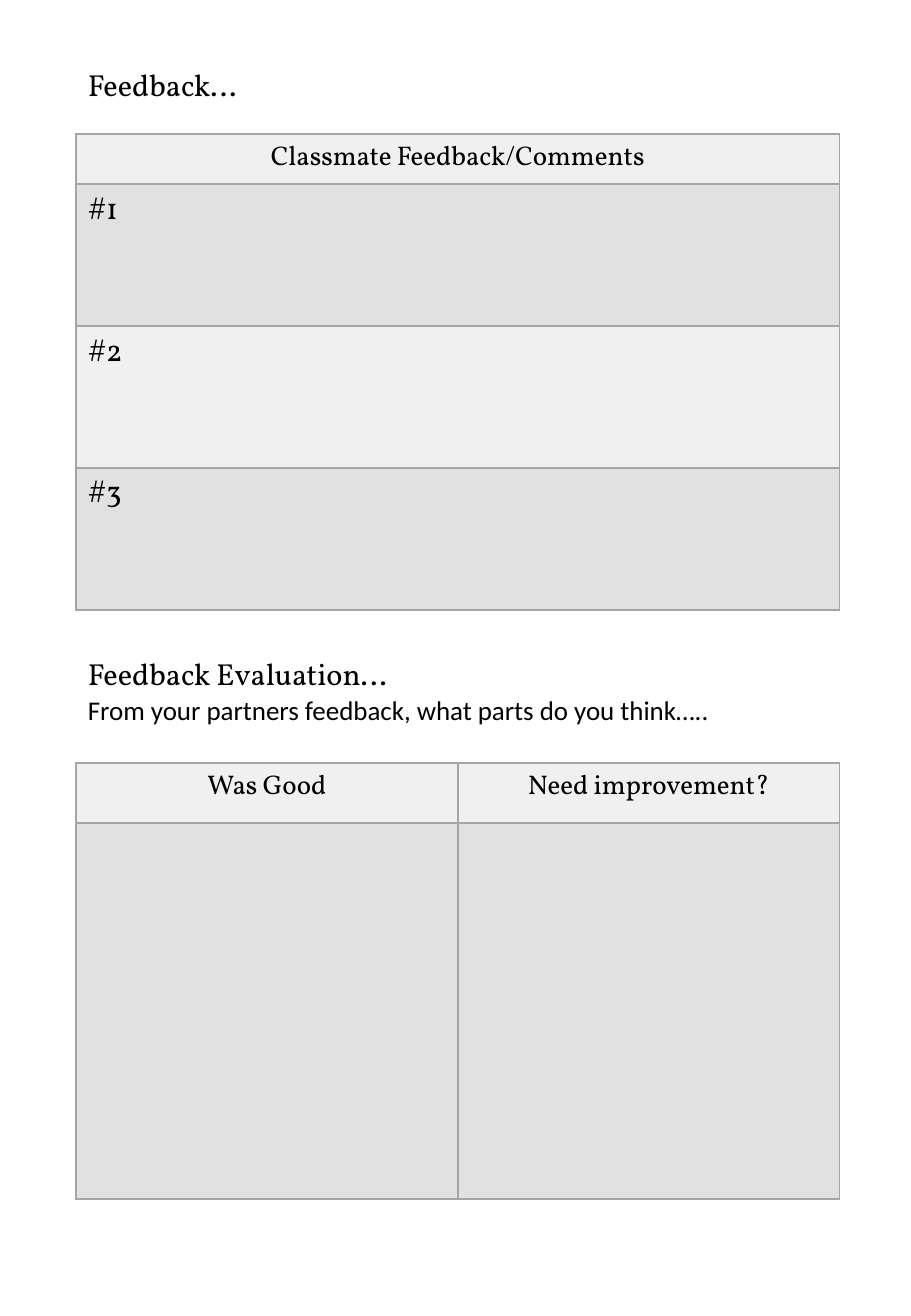
import pptx
import pptx.dml.color
import pptx.enum.text
import pptx.oxml
import pptx.oxml.ns
import pptx.util

PX = 7526  # EMU per pixel
BLACK = pptx.dml.color.RGBColor(0x00, 0x00, 0x00)
LIGHT = pptx.dml.color.RGBColor(0xF0, 0xF0, 0xF0)
DARK = pptx.dml.color.RGBColor(0xE1, 0xE1, 0xE1)
BORDER = pptx.dml.color.RGBColor(0xA5, 0xA5, 0xA5)
SERIF, SANS = "Vollkorn", "Calibri"
CENTER = pptx.enum.text.PP_ALIGN.CENTER
LEFT, WIDTH = 76, 764


def px(n):
    return pptx.util.Emu(n * PX)


def set_font(p, name, size):
    p.font.name = name
    p.font.size = pptx.util.Pt(size)
    p.font.color.rgb = BLACK


def add_borders(cell):
    tcPr = cell._tc.get_or_add_tcPr()
    for i, side in enumerate(("lnL", "lnR", "lnT", "lnB")):
        tcPr.insert(i, pptx.oxml.parse_xml(
            f'<a:{side} {pptx.oxml.ns.nsdecls("a")} w="12700"><a:solidFill>'
            f'<a:srgbClr val="{BORDER}"/></a:solidFill></a:{side}>'))


def add_table(s, top, heights, rows):
    """Table with a centred header row and bands of alternating grey."""
    n_cols = len(rows[0])
    table = s.shapes.add_table(len(rows), n_cols, px(LEFT), px(top),
                               px(WIDTH), px(sum(heights))).table
    for col in table.columns:
        col.width = px(WIDTH // n_cols)
    for i, (height, texts) in enumerate(zip(heights, rows)):
        table.rows[i].height = px(height)
        for j, text in enumerate(texts):
            cell = table.cell(i, j)
            cell.fill.solid()
            cell.fill.fore_color.rgb = DARK if i % 2 else LIGHT
            add_borders(cell)
            p = cell.text_frame.paragraphs[0]
            p.text = text
            set_font(p, SERIF, 18 if i else 16)
            p.font.bold = False
            if i == 0:
                p.alignment = CENTER


def add_text(s, top, width, height, lines, wrap=True):
    """Text box with one paragraph per (text, font, size, space before)."""
    tf = s.shapes.add_textbox(px(LEFT), px(top), px(width), px(height)).text_frame
    tf.word_wrap = wrap
    for i, (text, name, size, space) in enumerate(lines):
        p = tf.add_paragraph() if i else tf.paragraphs[0]
        p.text = text
        p.space_before = pptx.util.Pt(space)
        set_font(p, name, size)


def main():
    prs = pptx.Presentation()
    prs.slide_width = pptx.util.Inches(7.5)
    prs.slide_height = pptx.util.Inches(10.83)
    s = prs.slides.add_slide(prs.slide_layouts[6])

    # Classmate feedback
    add_text(s, 60, 183, 49, [("Feedback…", SERIF, 18, 0)], wrap=False)
    add_table(s, 134, [50, 142, 142, 142],
              [["Classmate Feedback/Comments"], ["#1"], ["#2"], ["#3"]])

    # Evaluation of the feedback
    add_text(s, 649, 744, 129, [
        ("Feedback Evaluation…", SERIF, 18, 0),
        ("From your partners feedback, what parts do you think…..", SANS, 16, 1)])
    add_table(s, 763, [60, 376], [["Was Good", "Need improvement?"], ["", ""]])

    prs.save("out.pptx")


if __name__ == "__main__":
    main()
